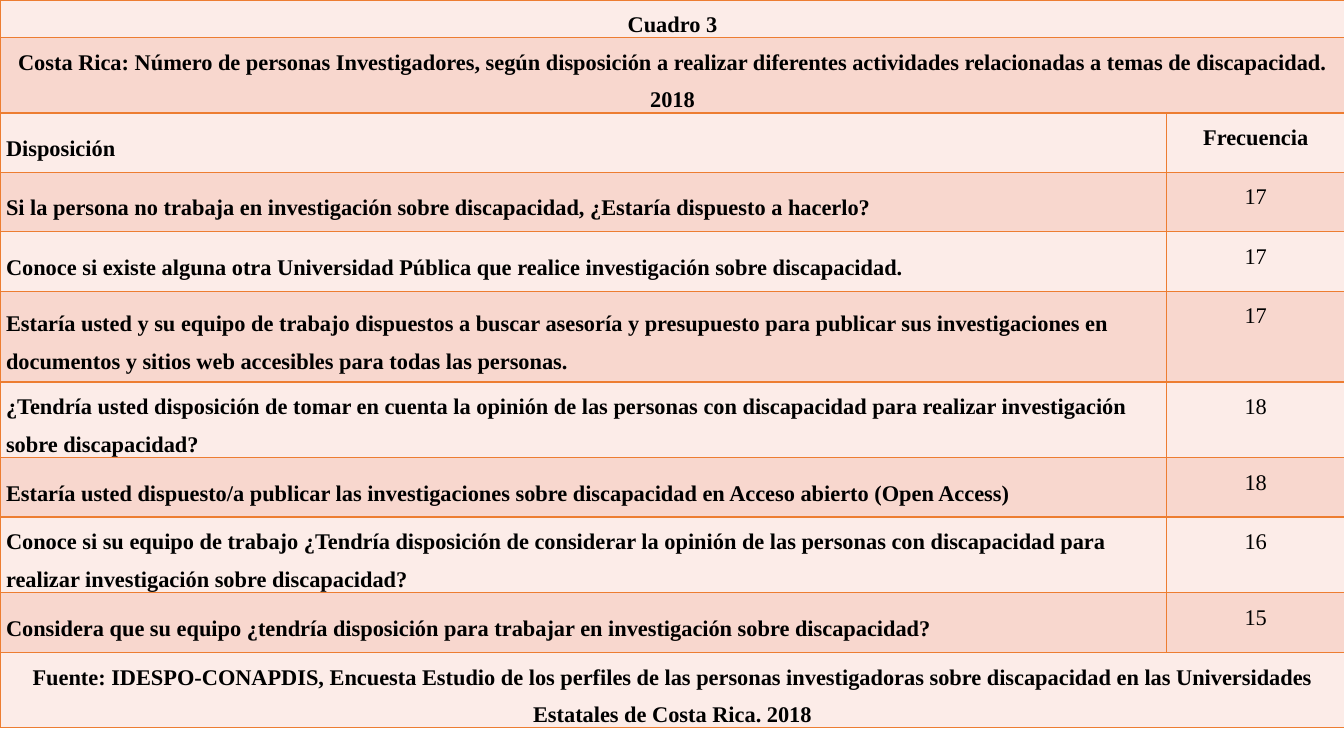
from lxml import etree
from pptx import Presentation
from pptx.dml.color import RGBColor
from pptx.enum.text import MSO_ANCHOR, PP_ALIGN
from pptx.oxml.ns import qn
from pptx.util import Inches, Pt

LEFT, CENTER = PP_ALIGN.LEFT, PP_ALIGN.CENTER
TOP, MIDDLE = MSO_ANCHOR.TOP, MSO_ANCHOR.MIDDLE

TITLES = [
    "Cuadro 3",
    "Costa Rica: Número de personas Investigadores, según disposición a realizar diferentes "
    "actividades relacionadas a temas de discapacidad. 2018",
]
HEADINGS = ("Disposición", "Frecuencia")
ANSWERS = [
    ("Si la persona no trabaja en investigación sobre discapacidad, ¿Estaría dispuesto a hacerlo?", 17),
    ("Conoce si existe alguna otra Universidad Pública que realice investigación sobre discapacidad.", 17),
    ("Estaría usted y su equipo de trabajo dispuestos a buscar asesoría y presupuesto para publicar "
     "sus investigaciones en documentos y sitios web accesibles para todas las personas.", 17),
    ("¿Tendría usted disposición de tomar en cuenta la opinión de las personas con discapacidad para "
     "realizar investigación sobre discapacidad?", 18),
    ("Estaría usted dispuesto/a publicar las investigaciones sobre discapacidad en Acceso abierto "
     "(Open Access)", 18),
    ("Conoce si su equipo de trabajo ¿Tendría disposición de considerar la opinión de las personas con "
     "discapacidad para realizar investigación sobre discapacidad?", 16),
    ("Considera que su equipo ¿tendría disposición para trabajar en investigación sobre discapacidad?", 15),
]
SOURCE = ("Fuente: IDESPO-CONAPDIS, Encuesta Estudio de los perfiles de las personas investigadoras sobre "
          "discapacidad en las Universidades Estatales de Costa Rica. 2018")

COLORS = {"text": "000000", "border": "ED7D31", "light": "FCECE8", "dark": "F8D7CE"}
FONT = "Times New Roman"
SLIDE_SIZE = (13.33, 7.5)
COLUMN_WIDTHS = (11.57, 1.77)
ROW_HEIGHTS = (0.35, 0.75, 0.59, 0.59, 0.59, 0.9, 0.75, 0.59, 0.75, 0.59, 0.75)


def write(cell, text, align=LEFT, anchor=MIDDLE, bold=True):
    cell.vertical_anchor = anchor
    cell.margin_left = cell.margin_right = Inches(0.06)
    cell.margin_top = cell.margin_bottom = 0
    paragraph = cell.text_frame.paragraphs[0]
    paragraph.alignment = align
    paragraph.line_spacing = 1.5
    paragraph.space_after = Pt(10)
    run = paragraph.add_run()
    run.text = text
    run.font.name = FONT
    run.font.size = Pt(16)
    run.font.bold = bold
    run.font.color.rgb = RGBColor.from_string(COLORS["text"])


def draw_borders(cell):
    properties = cell._tc.get_or_add_tcPr()
    for side in ("a:lnL", "a:lnR", "a:lnT", "a:lnB"):
        line = etree.SubElement(properties, qn(side), w=str(Pt(1)))
        fill = etree.SubElement(line, qn("a:solidFill"))
        etree.SubElement(fill, qn("a:srgbClr"), val=COLORS["border"])


def main():
    presentation = Presentation()
    presentation.slide_width, presentation.slide_height = map(Inches, SLIDE_SIZE)
    slide = presentation.slides.add_slide(presentation.slide_layouts[6])

    rows = [(title,) for title in TITLES] + [HEADINGS] + ANSWERS + [(SOURCE,)]
    table = slide.shapes.add_table(
        len(rows), len(COLUMN_WIDTHS), 0, 0,
        Inches(sum(COLUMN_WIDTHS)), Inches(sum(ROW_HEIGHTS))).table
    for column, width in zip(table.columns, COLUMN_WIDTHS):
        column.width = Inches(width)

    for index, (row, height) in enumerate(zip(rows, ROW_HEIGHTS)):
        table.rows[index].height = Inches(height)
        band = COLORS["dark" if index % 2 else "light"]
        for cell in table.rows[index].cells:
            draw_borders(cell)
            cell.fill.solid()
            cell.fill.fore_color.rgb = RGBColor.from_string(band)

        first, last = table.cell(index, 0), table.cell(index, 1)
        if len(row) == 1:
            first.merge(last)
            write(first, row[0], align=CENTER)
        else:
            disposition, frequency = row
            write(first, disposition)
            write(last, str(frequency), align=CENTER, anchor=TOP, bold=row is HEADINGS)

    presentation.save("out.pptx")


if __name__ == "__main__":
    main()
